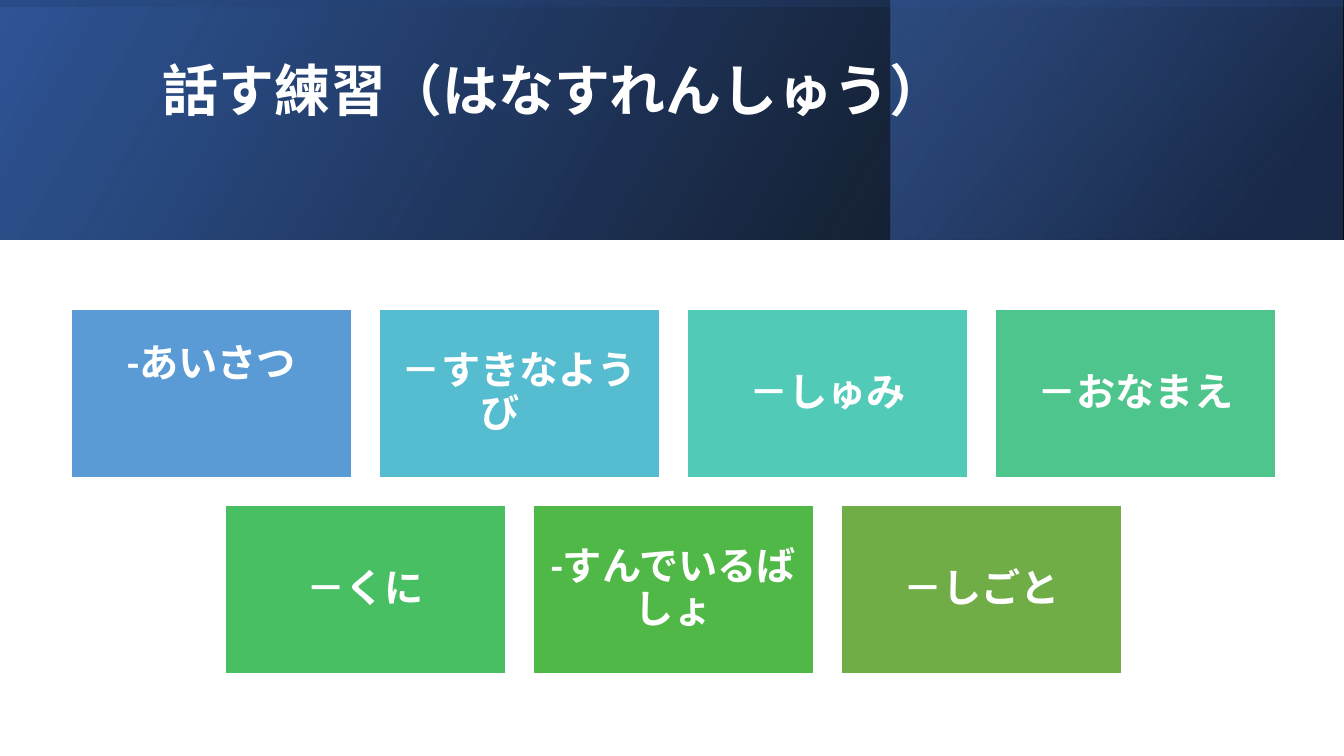
from lxml.etree import SubElement
from pptx import Presentation
from pptx.dml.color import RGBColor
from pptx.enum.shapes import MSO_SHAPE
from pptx.enum.text import MSO_ANCHOR, PP_ALIGN
from pptx.oxml.ns import qn
from pptx.util import Pt

WIDE, HIGH = 960, 540
BAND = 171
TITLE = "話す練習（はなすれんしゅう）"
# left, width, counter-clockwise angle, stops of (position %, colour, opacity %)
BANDS = [
    (0, WIDE, 150, [(0, "000000", 96), (100, "2F5597", 100)]),
    (636.5, 322.5, 140, [(19, "203864", 68), (100, "4472C4", 48)]),
    (0, WIDE, 260, [(23, "2F5597", 16), (99, "000000", 45)]),
]
# text, colour, extra space below the text
ROWS = [
    [("-あいさつ", "5B9BD5", 41), ("－すきなようび　", "56BCD0", 0),
     ("－しゅみ", "52CAB8", 0), ("－おなまえ", "4DC58D", 0)],
    [("－くに", "49BF64", 0), ("-すんでいるばしょ", "50B846", 0),
     ("－しごと", "70AD47", 0)],
]
CARD_W, CARD_H, GAP = 200, 120, 20
MID, TOP = 481, 221


def paint(hue):
    return RGBColor.from_string(hue)


def rect(left, top, width, height):
    box = slide.shapes.add_shape(
        MSO_SHAPE.RECTANGLE, Pt(left), Pt(top), Pt(width), Pt(height))
    box.shadow.inherit = False
    return box


def blend(box, angle, stops):
    """Fill a shape with a two-stop gradient of given opacities."""
    box.line.fill.background()
    box.fill.gradient()
    box.fill.gradient_angle = angle
    for stop, (place, hue, _) in zip(box.fill.gradient_stops, stops):
        stop.position = place / 100
        stop.color.rgb = paint(hue)
    tags = box.element.spPr.iter(qn("a:srgbClr"))
    for tag, (_, _, alpha) in zip(tags, stops):
        SubElement(tag, qn("a:alpha")).set("val", str(alpha * 1000))


def write(frame, text, size, align):
    frame.word_wrap = True
    frame.vertical_anchor = MSO_ANCHOR.MIDDLE
    para = frame.paragraphs[0]
    para.alignment = align
    para.line_spacing = 0.9
    run = para.add_run()
    run.text = text
    run.font.name = "Calibri"
    run.font.size = Pt(size)
    run.font.bold = True
    run.font.color.rgb = paint("FFFFFF")


def card(left, top, text, hue, lift):
    box = rect(left, top, CARD_W, CARD_H)
    box.fill.solid()
    box.fill.fore_color.rgb = paint(hue)
    box.line.color.rgb = paint("FFFFFF")
    box.line.width = Pt(1)
    frame = box.text_frame
    frame.margin_left = frame.margin_right = frame.margin_top = Pt(8.4)
    frame.margin_bottom = Pt(8.4 + lift)
    write(frame, text, 28, PP_ALIGN.CENTER)


deck = Presentation()
deck.slide_width, deck.slide_height = Pt(WIDE), Pt(HIGH)
slide = deck.slides.add_slide(deck.slide_layouts[6])

for left, width, angle, stops in BANDS:
    blend(rect(left, 0, width, BAND), angle, stops)

head = slide.shapes.add_textbox(Pt(109), Pt(27), Pt(765), Pt(80))
write(head.text_frame, TITLE, 40, PP_ALIGN.LEFT)

for r, row in enumerate(ROWS):
    start = MID - (len(row) * (CARD_W + GAP) - GAP) / 2
    for c, item in enumerate(row):
        card(start + c * (CARD_W + GAP), TOP + r * (CARD_H + GAP), *item)

deck.save("out.pptx")
